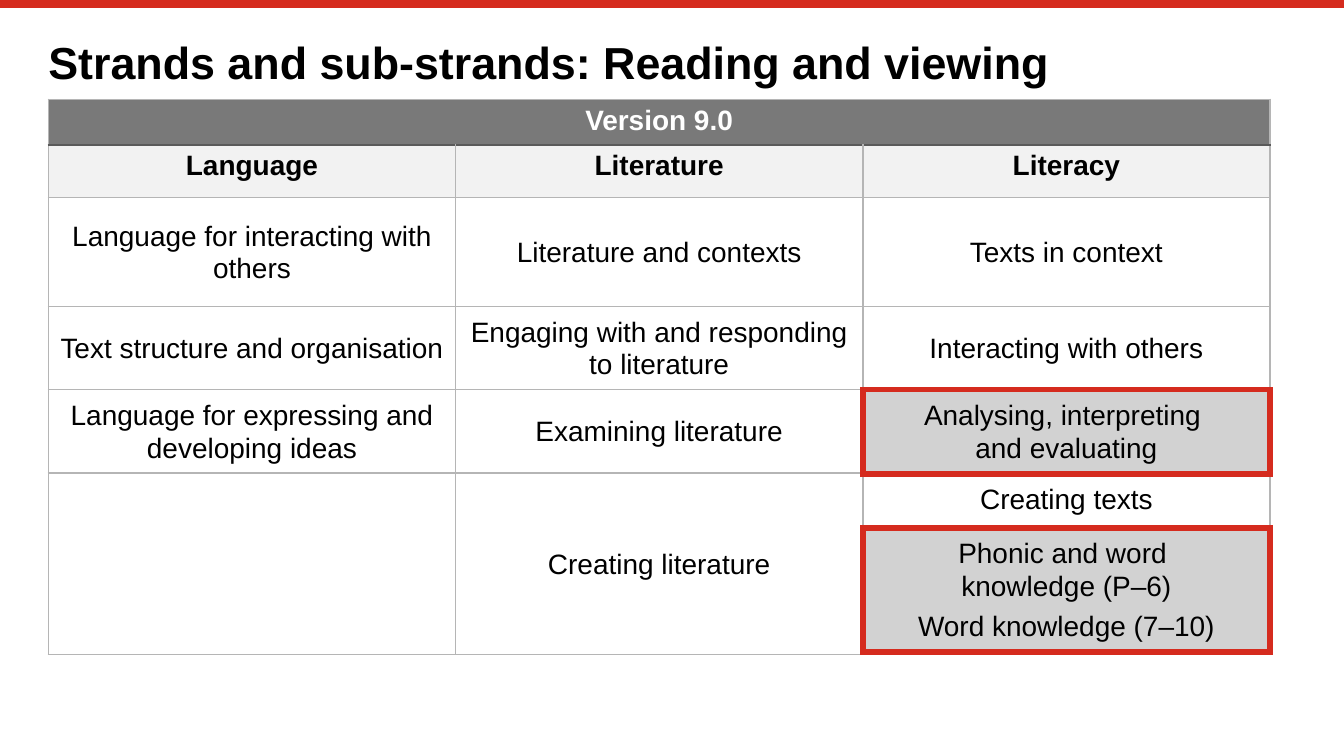
import pptx
import pptx.util
import pptx.dml.color
import pptx.enum.shapes
import pptx.enum.text
import pptx.oxml
import pptx.oxml.ns

RED, GREY, BLACK, WHITE = "D52B1E", "B5B5B5", "000000", "FFFFFF"
HEADER_RULE = "5A5A5A"
COLUMN_WIDTH = 3.03
ROW_HEIGHTS = [0.34, 0.39, 0.81, 0.62, 0.62, 0.39, 0.96]
STRANDS = ["Language", "Literature", "Literacy"]
# Each cell is a list of paragraphs.
SUB_STRANDS = [
    [["Language for interacting with others"], ["Literature and contexts"], ["Texts in context"]],
    [["Text structure and organisation"], ["Engaging with and responding to literature"],
     ["Interacting with others"]],
    [["Language for expressing and developing ideas"], ["Examining literature"],
     ["Analysing, interpreting \nand evaluating"]],
    [[""], ["Creating literature"], ["Creating texts"]],
    [[""], [""], ["Phonic and word \nknowledge (P–6)", "Word knowledge (7–10)"]],
]
HIGHLIGHTED = [(4, 2), (6, 2)]


def rgb(color):
    return pptx.dml.color.RGBColor.from_string(color)


def inches(*lengths):
    return [pptx.util.Inches(length) for length in lengths]


def drawing_element(tag, attributes="", content=""):
    namespace = pptx.oxml.ns.nsdecls("a")
    return pptx.oxml.parse_xml(f"<a:{tag} {namespace} {attributes}>{content}</a:{tag}>")


def style_runs(paragraph, size, color, bold):
    for font in [paragraph.font] + [run.font for run in paragraph.runs]:
        font.name, font.size, font.bold = "Arial", pptx.util.Pt(size), bold
        font.color.rgb = rgb(color)


def fill_cell(cell, color, opacity=100):
    cell.fill.solid()
    cell.fill.fore_color.rgb = rgb(color)
    if opacity < 100:
        swatch = cell._tc.tcPr.find(".//" + pptx.oxml.ns.qn("a:srgbClr"))
        swatch.append(drawing_element("alpha", f'val="{opacity * 1000}"'))


def border_cell(cell, top=GREY, bottom=GREY):
    """Draw all four borders; they must precede the fill in the cell properties."""
    sides = [("lnL", GREY), ("lnR", GREY), ("lnT", top), ("lnB", bottom)]
    for position, (side, color) in enumerate(sides):
        border = drawing_element(
            side, f'w="{pptx.util.Pt(1)}"',
            f'<a:solidFill><a:srgbClr val="{color}"/></a:solidFill>')
        cell._tc.get_or_add_tcPr().insert(position, border)


def write_cell(cell, texts, color=BLACK, bold=False, side_margin=0.1):
    cell.margin_left = cell.margin_right = pptx.util.Inches(side_margin)
    cell.margin_top = cell.margin_bottom = pptx.util.Inches(0.04)
    for index, text in enumerate(texts):
        frame = cell.text_frame
        paragraph = frame.add_paragraph() if index else frame.paragraphs[0]
        paragraph.text = text
        paragraph.alignment = pptx.enum.text.PP_ALIGN.CENTER
        if not bold:
            paragraph.line_spacing = 1.05
            paragraph.space_after = pptx.util.Pt(2)
            if index:
                paragraph.space_before = pptx.util.Pt(2)
        style_runs(paragraph, 15, color, bold)


def add_top_rule(slide, left, top, width):
    rule = slide.shapes.add_connector(
        pptx.enum.shapes.MSO_CONNECTOR.STRAIGHT, *inches(left, top, left + width, top))
    rule.line.color.rgb = rgb(RED)
    rule.line.width = pptx.util.Pt(4.2)
    rule._element.spPr.append(drawing_element("effectLst"))


def add_title(slide, left, top, width, height):
    frame = slide.shapes.add_textbox(*inches(left, top, width, height)).text_frame
    frame.word_wrap = True
    frame.margin_left = frame.margin_right = frame.margin_top = frame.margin_bottom = 0
    frame.text = "Strands and sub-strands: Reading and viewing"
    frame.paragraphs[0].line_spacing = 0.9
    style_runs(frame.paragraphs[0], 24, BLACK, True)


def add_strand_table(slide, left, top):
    columns = len(STRANDS)
    table = slide.shapes.add_table(
        len(ROW_HEIGHTS), columns,
        *inches(left, top, columns * COLUMN_WIDTH, sum(ROW_HEIGHTS))).table
    for column in table.columns:
        column.width = pptx.util.Inches(COLUMN_WIDTH)
    for row, height in zip(table.rows, ROW_HEIGHTS):
        row.height = pptx.util.Inches(height)

    table.cell(0, 0).merge(table.cell(0, columns - 1))
    for column in range(2):
        table.cell(5, column).merge(table.cell(6, column))

    for column, strand in enumerate(STRANDS):
        version = table.cell(0, column)
        write_cell(version, ["" if column else "Version 9.0"], WHITE, True)
        fill_cell(version, "797979")
        border_cell(version, bottom=HEADER_RULE)
        heading = table.cell(1, column)
        write_cell(heading, [strand], bold=True)
        fill_cell(heading, "F2F2F2")
        border_cell(heading, top=HEADER_RULE)

    for row, sub_strands in enumerate(SUB_STRANDS, start=2):
        for column, texts in enumerate(sub_strands):
            cell = table.cell(row, column)
            write_cell(cell, texts, side_margin=0.07)
            cell.vertical_anchor = pptx.enum.text.MSO_ANCHOR.MIDDLE
            if (row, column) in HIGHLIGHTED:
                fill_cell(cell, "A6A6A6", 50)
            else:
                fill_cell(cell, WHITE)
            border_cell(cell)


def add_highlight_frame(slide, left, top, width, height):
    frame = slide.shapes.add_shape(
        pptx.enum.shapes.MSO_SHAPE.RECTANGLE, *inches(left, top, width, height))
    frame.shadow.inherit = False
    frame.fill.background()
    frame.line.color.rgb = rgb(RED)
    frame.line.width = pptx.util.Pt(3)
    outline = frame._element.spPr.find(pptx.oxml.ns.qn("a:ln"))
    outline.append(drawing_element("miter", 'lim="800000"'))


def main():
    presentation = pptx.Presentation()
    presentation.slide_width = pptx.util.Inches(10)
    presentation.slide_height = presentation.slide_width * 9 // 16
    slide = presentation.slides.add_slide(presentation.slide_layouts[6])
    left = 0.36
    add_top_rule(slide, 0, 0.03, 10)
    add_title(slide, left, 0.3, 9.29, 0.39)
    add_strand_table(slide, left, 0.74)
    literacy_left = left + 2 * COLUMN_WIDTH
    add_highlight_frame(slide, literacy_left, 3.93, COLUMN_WIDTH, 0.92)
    add_highlight_frame(slide, literacy_left, 2.9, COLUMN_WIDTH, 0.63)
    presentation.save("out.pptx")


if __name__ == "__main__":
    main()
